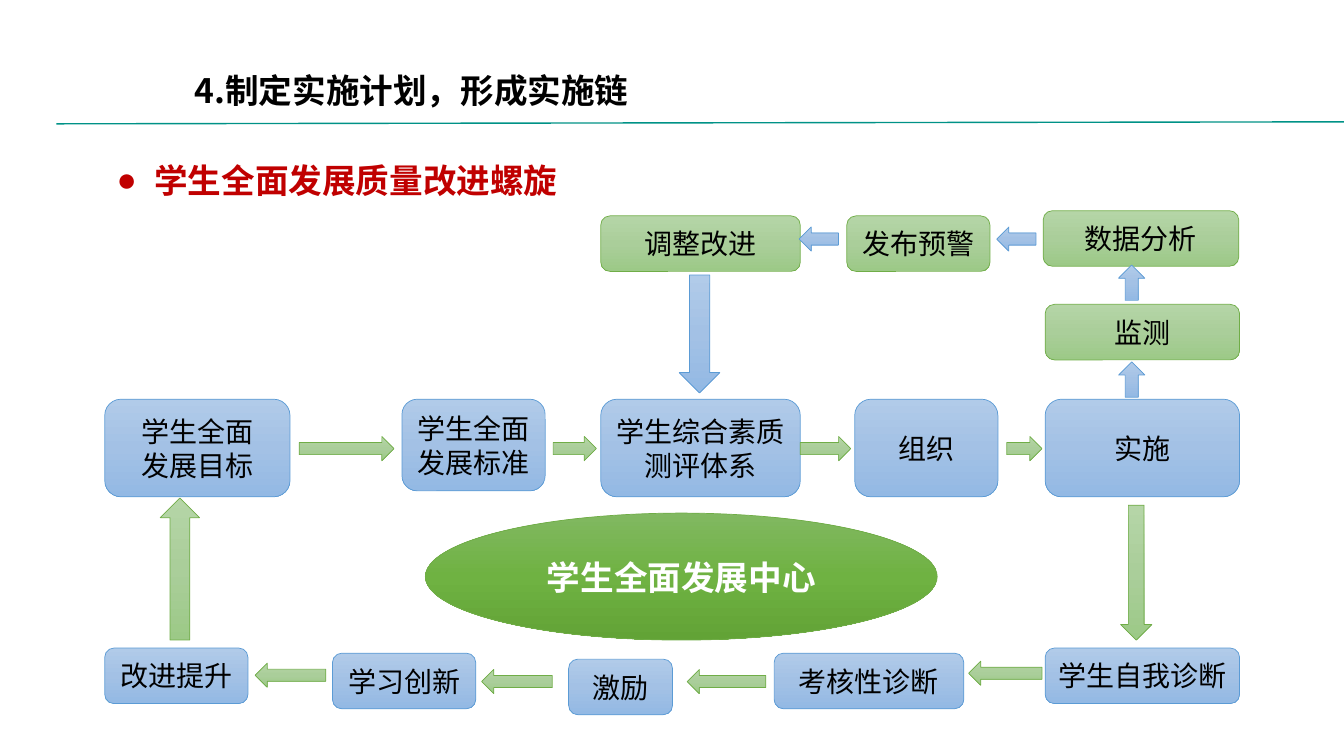
from copy import deepcopy

from lxml.etree import SubElement
from pptx import Presentation
from pptx.dml.color import RGBColor
from pptx.enum.shapes import MSO_CONNECTOR, MSO_SHAPE
from pptx.enum.text import MSO_ANCHOR, MSO_AUTO_SIZE, PP_ALIGN
from pptx.oxml.ns import qn
from pptx.util import Cm, Pt

CJK = "Noto Sans CJK SC"
COLORS = {"black": "000000", "white": "FFFFFF", "red": "C00000", "teal": "009287",
          "blue_line": "5B9BD5", "green_line": "70AD47"}
GRADIENTS = {"blue": ("B1CBE9", "A3C1E5", "93B9E4"),
             "green": ("B5D5A7", "AACE9A", "9CC987"),
             "deep": ("81B861", "6FB242", "62A336")}
ARROWS = {"left": MSO_SHAPE.LEFT_ARROW, "right": MSO_SHAPE.RIGHT_ARROW,
          "up": MSO_SHAPE.UP_ARROW, "down": MSO_SHAPE.DOWN_ARROW}
ARROW_H = 0.61
NODE_H = 1.4


def rgb(name):
    """Return the named colour."""
    return RGBColor.from_string(COLORS[name])


def write(sp, text, size=20, font=CJK, color="black", bold=False,
          align=PP_ALIGN.CENTER, anchor=MSO_ANCHOR.MIDDLE):
    """Put formatted text in a shape, one paragraph per line."""
    tf = sp.text_frame
    tf.word_wrap = True
    tf.vertical_anchor = anchor
    tf.text = text
    for p in tf.paragraphs:
        p.alignment = align
        for r in p.runs:
            r.font.size, r.font.bold, r.font.name = Pt(size), bold, font
            r.font.color.rgb = rgb(color)
            SubElement(r.font._element, qn("a:ea"), typeface=font)


def add_block(s, kind, x, y, w, h, fill, line):
    """Add a shape with a vertical three-stop gradient."""
    sp = s.shapes.add_shape(kind, Cm(x), Cm(y), Cm(w), Cm(h))
    sp.shadow.inherit = False
    sp.fill.gradient()
    sp.fill.gradient_angle = 270
    stops = sp._element.spPr.find(".//" + qn("a:gsLst"))
    stops.insert(1, deepcopy(stops[0]))
    for i, stop in enumerate(sp.fill.gradient_stops):
        stop.position = i / 2
        stop.color.rgb = RGBColor.from_string(GRADIENTS[fill][i])
    sp.line.color.rgb = rgb(line)
    sp.line.width = Pt(0.5)
    return sp


def add_node(s, text, x, y, w, h, color):
    """Add a rounded step box."""
    sp = add_block(s, MSO_SHAPE.ROUNDED_RECTANGLE, x, y, w, h, color, color + "_line")
    write(sp, text)


def add_arrow(s, way, x, y, w, h, color):
    """Add a block arrow pointing the given way."""
    add_block(s, ARROWS[way], x, y, w, h, color, color + "_line")


def add_header(s, x, y, w):
    """Place the title, the rule under it and the red subheading."""
    title = s.shapes.title
    title.left, title.top, title.width, title.height = Cm(x + 3.23), Cm(y), Cm(14.68), Cm(1.27)
    write(title, "4.制定实施计划，形成实施链", size=24, bold=True,
          align=PP_ALIGN.LEFT, anchor=MSO_ANCHOR.TOP)
    title.text_frame.auto_size = MSO_AUTO_SIZE.SHAPE_TO_FIT_TEXT

    rule = s.shapes.add_connector(MSO_CONNECTOR.STRAIGHT, Cm(x), Cm(y + 1.49),
                                  Cm(x + w), Cm(y + 1.44))
    rule.line.color.rgb = rgb("teal")
    rule.line.width = Pt(1)
    SubElement(rule._element.spPr, qn("a:effectLst"))

    sub = s.shapes.add_textbox(Cm(x + 1.27), Cm(y + 2.28), Cm(14.83), Cm(1.8))
    write(sub, "学生全面发展质量改进螺旋", size=24, font="Arial", color="red", bold=True,
          align=PP_ALIGN.LEFT, anchor=MSO_ANCHOR.TOP)
    pPr = sub.text_frame.paragraphs[0]._p.get_or_add_pPr()
    pPr.set("marL", str(Cm(0.95)))
    pPr.set("indent", str(-Cm(0.95)))
    SubElement(SubElement(pPr, qn("a:spcBef")), qn("a:spcPct"), val="20000")
    SubElement(pPr, qn("a:buFont"), typeface="Arial")
    SubElement(pPr, qn("a:buChar"), char="●")


def add_feedback(s, x, y):
    """Place the green monitoring steps and their blue arrows."""
    for text, dx, dy, w in [("调整改进", 0, 0.13, 5.03), ("发布预警", 6.2, 0.13, 3.61),
                            ("数据分析", 11.15, 0, 4.93), ("监测", 11.2, 2.36, 4.9)]:
        add_node(s, text, x + dx, y + dy, w, NODE_H, "green")
    for dx in (5, 9.98):
        add_arrow(s, "left", x + dx, y + 0.41, 0.99, ARROW_H, "blue")
    for dy in (1.37, 3.81):
        add_arrow(s, "up", x + 13.05, y + dy, 0.66, 0.89, "blue")
    add_arrow(s, "down", x + 1.98, y + 1.62, 1.02, 2.97, "blue")


def add_main_row(s, x, y):
    """Place the chain from goals to implementation."""
    for text, dx, w, h in [("学生全面\n发展目标", 0, 4.67, 2.46),
                           ("学生全面发展标准", 7.49, 3.61, 2.31),
                           ("学生综合素质测评体系", 12.5, 5.03, 2.46),
                           ("组织", 18.9, 3.61, 2.46), ("实施", 23.7, 4.9, 2.46)]:
        add_node(s, text, x + dx, y, w, h, "blue")
    for dx, w in [(4.9, 2.39), (11.3, 1.09), (17.53, 1.27), (22.73, 0.89)]:
        add_arrow(s, "right", x + dx, y + 0.94, w, ARROW_H, "green")


def add_center(s, x, y):
    """Place the central ellipse between the two vertical arrows."""
    sp = add_block(s, MSO_SHAPE.OVAL, x + 8.08, y + 0.41, 12.9, 3.2, "deep", "green_line")
    write(sp, "学生全面发展中心", size=24, color="white", bold=True)
    add_arrow(s, "up", x + 1.4, y + 0.03, 0.99, 3.58, "green")
    add_arrow(s, "down", x + 25.6, y + 0.21, 0.79, 3.4, "green")


def add_return_row(s, x, y):
    """Place the chain from self-diagnosis back to improvement."""
    for text, dx, dy, w in [("学生自我诊断", 23.7, 0, 4.9), ("考核性诊断", 16.87, 0.13, 4.78),
                            ("激励", 11.69, 0.28, 2.62), ("学习创新", 5.74, 0.13, 3.61),
                            ("改进提升", 0, 0, 3.61)]:
        add_node(s, text, x + dx, y + dy, w, NODE_H, "blue")
    for dx, dy, w in [(21.77, 0.33, 1.85), (14.68, 0.54, 1.98),
                      (9.5, 0.54, 1.78), (3.79, 0.38, 1.78)]:
        add_arrow(s, "left", x + dx, y + dy, w, ARROW_H, "green")


def main():
    """Build the slide and save it."""
    prs = Presentation()
    prs.slide_width, prs.slide_height = Cm(33.87), Cm(19.05)
    s = prs.slides.add_slide(prs.slide_layouts[5])
    add_header(s, 1.42, 1.63, 32.45)
    add_feedback(s, 15.14, 5.31)
    add_main_row(s, 2.64, 10.06)
    add_center(s, 2.64, 12.52)
    add_return_row(s, 2.64, 16.33)
    prs.save("out.pptx")


if __name__ == "__main__":
    main()
